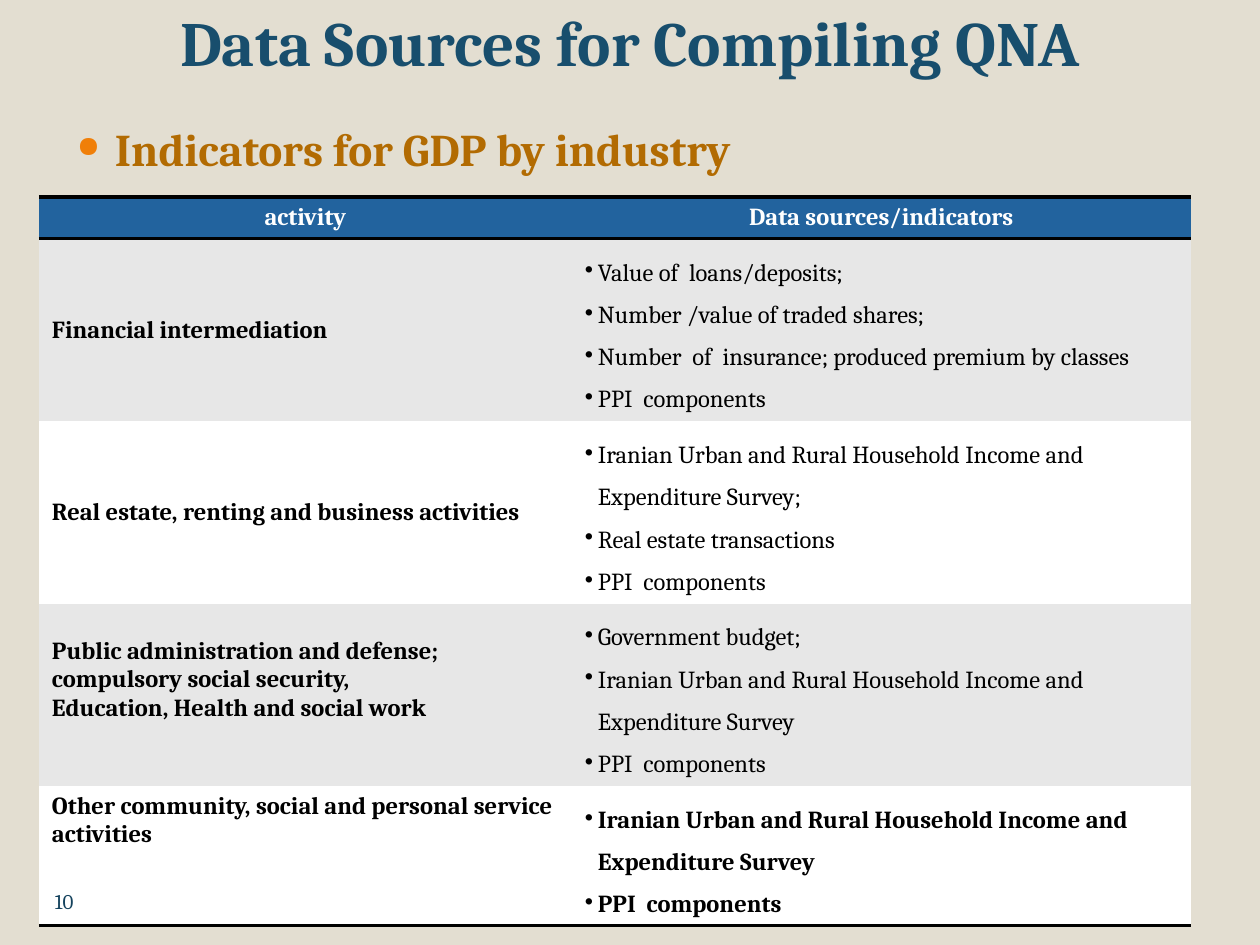
from lxml.etree import SubElement
from pptx import Presentation
from pptx.dml.color import RGBColor
from pptx.enum.text import MSO_ANCHOR as Anchor, PP_ALIGN as Align
from pptx.oxml import parse_xml
from pptx.oxml.ns import nsdecls, qn
from pptx.util import Pt

PX = 914400 / 126
FONT = "Cambria"
COLORS = {
    "background": "E3DED1", "title": "184E6D", "subtitle": "B26B02",
    "bullet": "F07F09", "page": "14425D", "header": "22639E",
    "band": "E7E7E7", "white": "FFFFFF", "black": "000000",
}
NO_TABLE_STYLE = "{2D5ABB26-0587-4C30-8999-92F81FD0307C}"
HEADINGS = ["activity", "Data sources/indicators"]
SURVEY = "Iranian Urban and Rural Household Income and Expenditure Survey"
PPI = "PPI  components"
# Activity lines, its anchor and top margin, then its indicators
ACTIVITIES = [
    (["Financial intermediation"], Anchor.MIDDLE, 6,
     ["Value of  loans/deposits;", "Number /value of traded shares;",
      "Number  of  insurance; produced premium by classes", PPI]),
    (["Real estate, renting and business activities"], Anchor.MIDDLE, 6,
     [SURVEY + ";", "Real estate transactions", PPI]),
    (["Public administration and defense; compulsory social security,",
      "Education, Health and social work"], Anchor.TOP, 34,
     ["Government budget;", SURVEY, PPI]),
    (["Other community, social and personal service activities"], Anchor.TOP, 6,
     [SURVEY, PPI]),
]
COLUMN_WIDTHS = [533, 619]
ROW_HEIGHTS = [42, 182, 182, 182, 139]


def px(length):
    return round(length * PX)


def rgb(name):
    return RGBColor.from_string(COLORS[name])


def style(paragraph, size, color, bold=False, align=Align.LEFT):
    paragraph.alignment = align
    font = paragraph.font
    font.name, font.size, font.bold = FONT, Pt(size), bold
    font.color.rgb = rgb(color)


def add_bullet(paragraph, char, indent, color=None, percent=None):
    props = paragraph._p.get_or_add_pPr()
    props.set("marL", str(px(indent)))
    props.set("indent", str(-px(indent)))
    marks = []
    if color:
        marks.append(f'<a:buClr {nsdecls("a")}><a:srgbClr val="{COLORS[color]}"/></a:buClr>')
    if percent:
        marks.append(f'<a:buSzPct {nsdecls("a")} val="{percent * 1000}"/>')
    marks.append(f'<a:buChar {nsdecls("a")} char="{char}"/>')
    # Bullet marks belong before the default run properties
    for mark in marks:
        props.find(qn("a:defRPr")).addprevious(parse_xml(mark))


def add_text(slide, text, box, size, color, bold=False, align=Align.LEFT,
             anchor=Anchor.TOP, top=0, bottom=0):
    frame = slide.shapes.add_textbox(*map(px, box)).text_frame
    frame.word_wrap = True
    frame.vertical_anchor = anchor
    frame.margin_left = frame.margin_right = px(13)
    frame.margin_top, frame.margin_bottom = px(top), px(bottom)
    paragraph = frame.paragraphs[0]
    paragraph.text = text
    style(paragraph, size, color, bold, align)
    return paragraph


def add_border(cell, side):
    line = parse_xml(f'<a:{side} {nsdecls("a")} w="{Pt(2)}"/>')
    fill = SubElement(line, qn("a:solidFill"))
    SubElement(fill, qn("a:srgbClr"), val=COLORS["black"])
    cell._tc.get_or_add_tcPr().insert(0, line)


def fill_cell(cell, lines, fill, color="black", bold=True, align=Align.LEFT,
              anchor=Anchor.TOP, top=6, bottom=6, bulleted=False, borders=()):
    cell.fill.solid()
    cell.fill.fore_color.rgb = rgb(fill)
    cell.vertical_anchor = anchor
    cell.margin_left = cell.margin_right = px(13)
    cell.margin_top, cell.margin_bottom = px(top), px(bottom)
    cell.text_frame.text = "\n".join(lines)
    for paragraph in cell.text_frame.paragraphs:
        style(paragraph, 14, color, bold, align)
        if bulleted:
            paragraph.line_spacing = 1.5
            add_bullet(paragraph, "•", 13)
    for side in borders:
        add_border(cell, side)


def add_indicator_table(slide):
    frame = slide.shapes.add_table(
        len(ROW_HEIGHTS), len(COLUMN_WIDTHS), px(39), px(197),
        px(sum(COLUMN_WIDTHS)), px(sum(ROW_HEIGHTS)))
    table = frame.table
    table.first_row = table.horz_banding = False
    table._tbl.tblPr.find(qn("a:tableStyleId")).text = NO_TABLE_STYLE
    for column, width in zip(table.columns, COLUMN_WIDTHS):
        column.width = px(width)
    for row, height in zip(table.rows, ROW_HEIGHTS):
        row.height = px(height)

    # Header row
    for column, heading in enumerate(HEADINGS):
        fill_cell(table.cell(0, column), [heading], "header", "white",
                  align=Align.CENTER, borders=("lnB", "lnT"))

    # Banded activity rows, the last one bold and ruled off
    for row, (activity, anchor, top, indicators) in enumerate(ACTIVITIES, 1):
        fill = "band" if row % 2 else "white"
        last = row == len(ACTIVITIES)
        borders = ("lnB",) if last else ()
        fill_cell(table.cell(row, 0), activity, fill, anchor=anchor, top=top,
                  borders=borders)
        fill_cell(table.cell(row, 1), indicators, fill, bold=last, bottom=0,
                  bulleted=True, borders=borders)


def main():
    deck = Presentation()
    deck.slide_width, deck.slide_height = px(1260), px(945)
    slide = deck.slides.add_slide(deck.slide_layouts[6])
    slide.background.fill.solid()
    slide.background.fill.fore_color.rgb = rgb("background")

    # Title and subtitle
    add_text(slide, "Data Sources for Compiling QNA", (63, 38, 1134, 48), 36,
             "title", bold=True, align=Align.CENTER, anchor=Anchor.BOTTOM,
             bottom=7)
    subtitle = add_text(slide, "Indicators for GDP by industry",
                        (64, 116, 1134, 59), 25.9, "subtitle", bold=True, top=5)
    add_bullet(subtitle, "●", 38, "bullet", 65)

    add_indicator_table(slide)

    # Page number
    add_text(slide, "10", (42, 883, 494, 50), 12, "page", top=6, bottom=6)
    deck.save("out.pptx")


if __name__ == "__main__":
    main()
